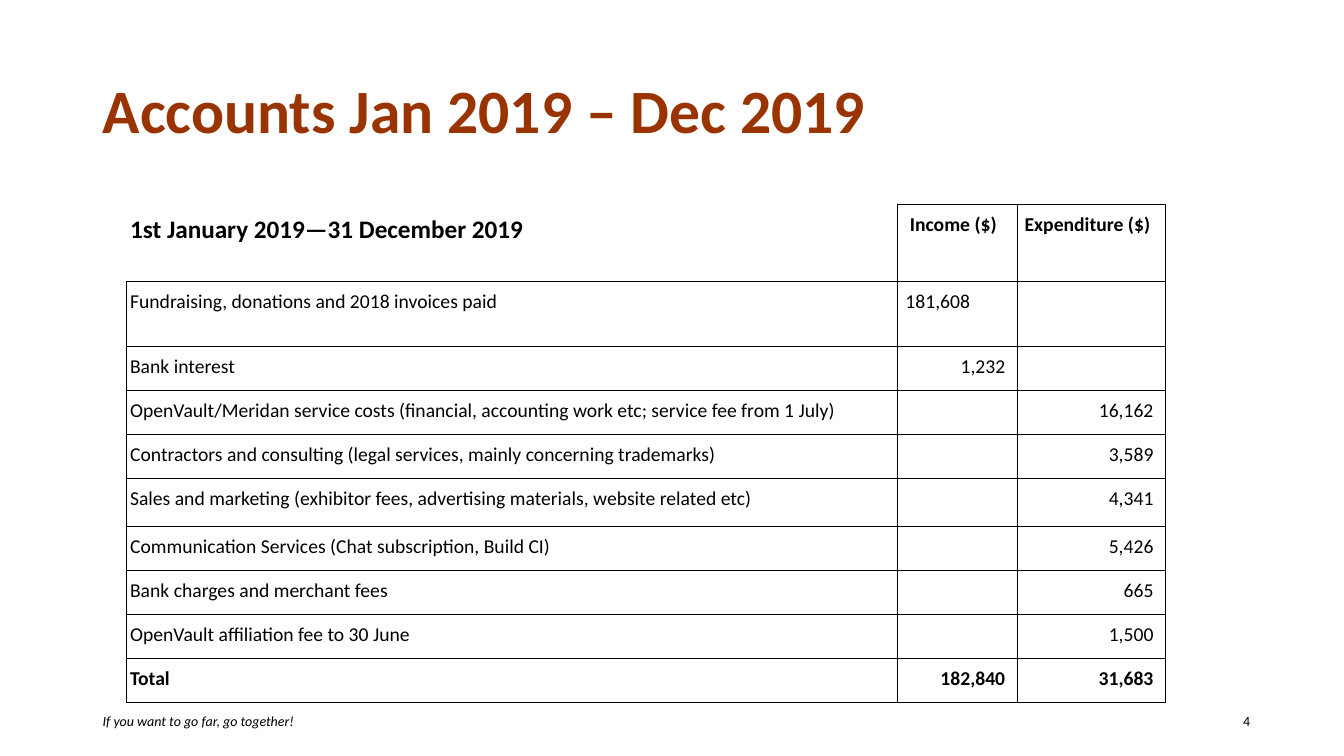
from lxml import etree
from pptx import Presentation
from pptx import util as u
from pptx.dml.color import RGBColor
from pptx.enum import text
from pptx.oxml.ns import qn

COLOURS = {"title": "993300", "ink": "000000"}
FONT = "Calibri"
PAGE_WIDTH, PAGE_HEIGHT = u.Inches(13.33), u.Inches(7.5)
LEFT, CENTRE, RIGHT = text.PP_ALIGN.LEFT, text.PP_ALIGN.CENTER, text.PP_ALIGN.RIGHT

# Columns and rows are percentages of the slide's width and height.
COLUMNS = [57.39, 8.93, 11.03]
ROW, TALL_ROW = 5.82, 6.35
ROWS = [10.13, 8.6] + [ROW] * 3 + [TALL_ROW] + [ROW] * 4
ACCOUNTS = [
    ("1st January 2019—31 December 2019", "Income ($)", "Expenditure ($)"),
    ("Fundraising, donations and 2018 invoices paid", "181,608", ""),
    ("Bank interest", "1,232", ""),
    ("OpenVault/Meridan service costs (financial, accounting work etc; "
     "service fee from 1 July)", "", "16,162"),
    ("Contractors and consulting (legal services, mainly concerning trademarks)",
     "", "3,589"),
    ("Sales and marketing (exhibitor fees, advertising materials, "
     "website related etc)", "", "4,341"),
    ("Communication Services (Chat subscription, Build CI)", "", "5,426"),
    ("Bank charges and merchant fees", "", "665"),
    ("OpenVault affiliation fee to 30 June", "", "1,500"),
    ("Total", "182,840", "31,683"),
]


def across(percent):
    return round(PAGE_WIDTH * percent / 100)


def down(percent):
    return round(PAGE_HEIGHT * percent / 100)


def write(frame, words, size, colour="ink", bold=False, italic=False,
          align=LEFT, spacing=1.0, after=0):
    para = frame.paragraphs[0]
    para.alignment = align
    para.line_spacing = spacing
    para.space_before = u.Pt(0)
    para.space_after = u.Pt(after)
    span = para.add_run()
    span.text = words
    font = span.font
    font.name, font.size = FONT, u.Pt(size)
    font.bold, font.italic = bold, italic
    font.color.rgb = RGBColor.from_string(COLOURS[colour])


def add_title(page, words):
    title = page.shapes.title
    title.left, title.top = across(6.9), down(5.33)
    title.width, title.height = across(86.27), down(19.33)
    frame = title.text_frame
    frame.auto_size = text.MSO_AUTO_SIZE.NONE
    frame.vertical_anchor = text.MSO_ANCHOR.MIDDLE
    write(frame, words, 44, colour="title", bold=True, spacing=0.9)


def add_footer(page, words, left, width, italic=False):
    box = page.shapes.add_textbox(across(left), down(93.6), across(width), down(3.6))
    frame = box.text_frame
    frame.word_wrap = False
    frame.auto_size = text.MSO_AUTO_SIZE.SHAPE_TO_FIT_TEXT
    write(frame, words, 10, italic=italic)


def set_borders(cell, visible):
    """Draw the sides named in visible (of L, R, T, B) and hide the others."""
    properties = cell._tc.get_or_add_tcPr()
    for index, side in enumerate("LRTB"):
        line = etree.Element(qn(f"a:ln{side}"), w=str(u.Pt(0.5)))
        if side in visible:
            fill = etree.SubElement(line, qn("a:solidFill"))
            etree.SubElement(fill, qn("a:srgbClr"), val=COLOURS["ink"])
        else:
            etree.SubElement(line, qn("a:noFill"))
        properties.insert(index, line)


def cell_format(row, column):
    """Return size, weight and alignment for one cell of the accounts."""
    header, total = row == 0, row == len(ACCOUNTS) - 1
    align = RIGHT
    if column == 0 or (row, column) == (1, 1):
        align = LEFT
    elif header:
        align = CENTRE
    return {"size": 18 if header and column == 0 else 14,
            "bold": header or total, "align": align}


def add_accounts(page):
    table = page.shapes.add_table(
        len(ROWS), len(COLUMNS), across(9.38), down(27.07),
        across(sum(COLUMNS)), down(sum(ROWS))).table
    table.first_row = table.horz_banding = False
    for column, width in zip(table.columns, COLUMNS):
        column.width = across(width)
    for row, height in zip(table.rows, ROWS):
        row.height = down(height)
    for r, entries in enumerate(ACCOUNTS):
        for c, words in enumerate(entries):
            cell = table.cell(r, c)
            look = cell_format(r, c)
            indented = c > 0 and look["align"] == LEFT
            cell.margin_left = u.Inches(0.08 if indented else 0.04)
            cell.margin_right = u.Inches(0.12 if c else 0.04)
            cell.margin_top = cell.margin_bottom = u.Inches(0.04)
            cell.fill.background()
            set_borders(cell, "RB" if r == c == 0 else "LRTB")
            if words:
                write(cell.text_frame, words, spacing=1.19, after=6, **look)
            else:
                cell.text_frame.paragraphs[0].font.size = u.Pt(14)


def main():
    deck = Presentation()
    deck.slide_width, deck.slide_height = PAGE_WIDTH, PAGE_HEIGHT
    page = deck.slides.add_slide(deck.slide_layouts.get_by_name("Title Only"))
    add_footer(page, "If you want to go far, go together!", 6.9, 16.05, italic=True)
    add_footer(page, "4", 91.75, 2.78)
    add_title(page, "Accounts Jan 2019 – Dec 2019")
    add_accounts(page)
    deck.save("out.pptx")


if __name__ == "__main__":
    main()
